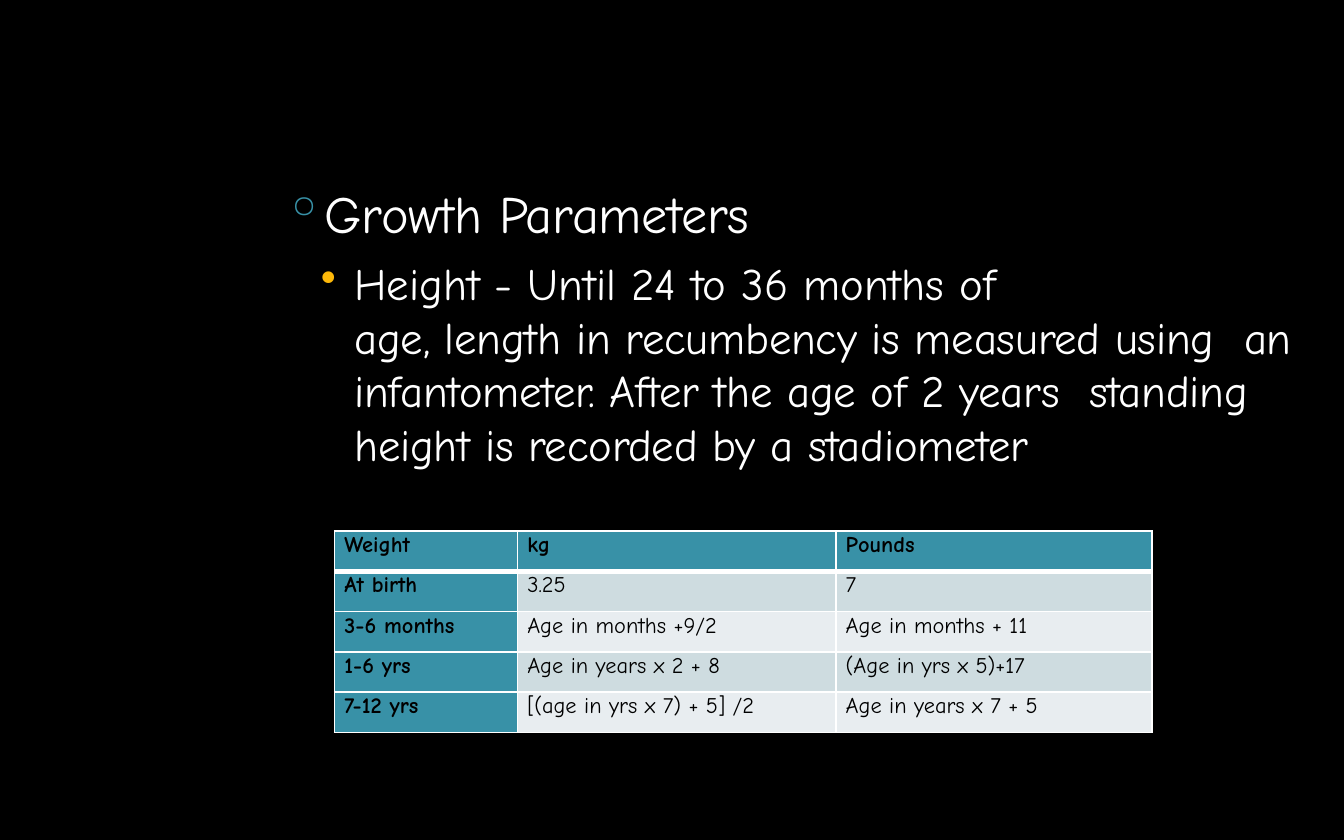
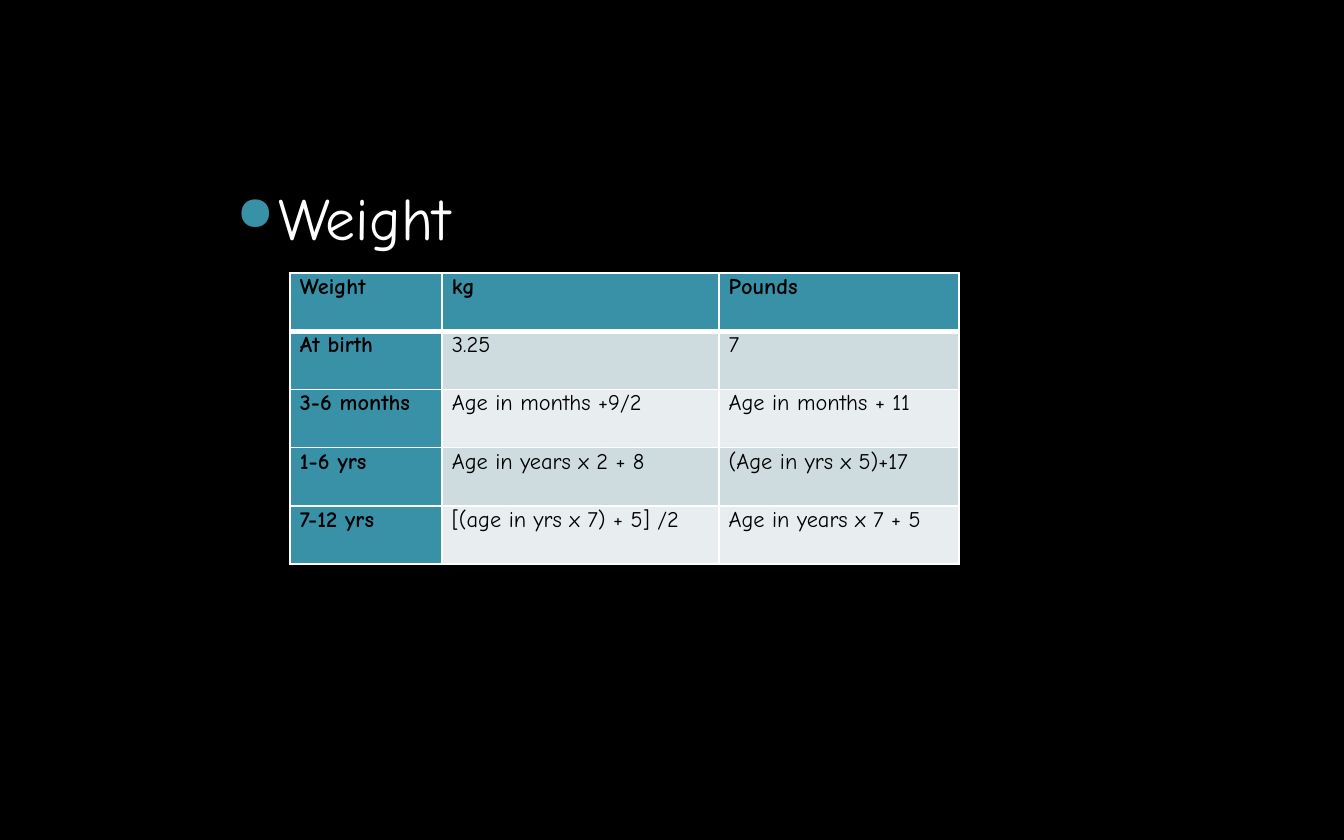
from lxml.etree import SubElement
from pptx import Presentation
from pptx.dml.color import RGBColor
from pptx.enum.text import MSO_AUTO_SIZE as AutoSize
from pptx.oxml.ns import qn
from pptx.util import Pt

# Shared look
FONT = "Comic Neue"
BLACK, WHITE = "000000", "FFFFFF"
TEAL, AMBER = "3891A7", "FDB809"
BANDS = ("CEDCE0", "E8EDF0")

WEIGHT_ROWS = (
    ("Weight", "kg", "Pounds"),
    ("At birth", "3.25", "7"),
    ("3-6 months", "Age in months +9/2", "Age in months + 11"),
    ("1-6 yrs", "Age in years x 2 + 8", "(Age in yrs x 5)+17"),
    ("7-12 yrs", "[(age in yrs x 7) + 5] /2", "Age in years x 7 + 5"),
)


def color(value):
    return RGBColor.from_string(value)


def add_page(deck):
    page = deck.slides.add_slide(deck.slide_layouts[6])
    page.background.fill.solid()
    page.background.fill.fore_color.rgb = color(BLACK)
    return page


def add_bullet(para, char, tint, percent):
    props = para._p.get_or_add_pPr()
    bullet_color = SubElement(props, qn("a:buClr"))
    SubElement(bullet_color, qn("a:srgbClr"), val=tint)
    SubElement(props, qn("a:buSzPct"), val=str(percent * 1000))
    SubElement(props, qn("a:buChar"), char=char)


def write(frame, text, *, size, tint=WHITE, bold=False, before=0, indent=0,
          hang=0, level=0, bullet=None, bullet_tint=TEAL, bullet_percent=100,
          tracking=0):
    """Fill the frame's empty first paragraph, or add another one."""
    first = frame.paragraphs[0]
    para = frame.add_paragraph() if first.runs else first
    para.level = level
    props = para._p.get_or_add_pPr()
    props.set("marL", str(Pt(indent)))
    props.set("indent", str(Pt(-hang)))
    if bullet:
        add_bullet(para, bullet, bullet_tint, bullet_percent)
    para.space_before = Pt(before)
    span = para.add_run()
    span.text = text
    span.font.name = FONT
    span.font.size = Pt(size)
    span.font.bold = bold
    span.font.color.rgb = color(tint)
    if tracking:
        span.font._element.set("spc", str(round(tracking * 100)))


def set_margins(area, top):
    area.margin_left = area.margin_right = area.margin_bottom = 0
    area.margin_top = Pt(top)


def add_text_box(page, left, top, width, height, inset):
    box = page.shapes.add_textbox(Pt(left), Pt(top), Pt(width), Pt(height))
    frame = box.text_frame
    frame.word_wrap = True
    frame.auto_size = AutoSize.SHAPE_TO_FIT_TEXT
    set_margins(frame, inset)
    return frame


def add_borders(cell, **widths):
    props = cell._tc.get_or_add_tcPr()
    for side in "LRTB":
        line = SubElement(props, qn(f"a:ln{side}"), w=str(Pt(widths.get(side, 1))))
        fill = SubElement(line, qn("a:solidFill"))
        SubElement(fill, qn("a:srgbClr"), val=WHITE)


def add_weight_table(page, left, top, columns, row_height):
    count = len(WEIGHT_ROWS)
    table = page.shapes.add_table(
        count, len(columns), Pt(left), Pt(top),
        Pt(sum(columns)), Pt(row_height * count)).table
    for column, width in zip(table.columns, columns):
        column.width = Pt(width)
    for r, texts in enumerate(WEIGHT_ROWS):
        table.rows[r].height = Pt(row_height)
        for c, text in enumerate(texts):
            cell = table.cell(r, c)
            heading = r == 0 or c == 0
            set_margins(cell, 0.8)
            # A thick rule separates the header row from the values
            add_borders(cell, T=3 if r == 1 else 1, B=3 if r == 0 else 1)
            cell.fill.solid()
            cell.fill.fore_color.rgb = color(TEAL if heading else BANDS[(r - 1) % 2])
            write(cell.text_frame, text, size=12, tint=BLACK, bold=heading, indent=5.2)


def build_height_page(deck):
    page = add_page(deck)
    frame = add_text_box(page, 151, 89.3, 545, 164, 8)
    write(frame, "Growth Parameters", size=28, indent=19.5, hang=18.7,
          bullet="◦", tracking=-0.1)
    write(frame, "Height - Until 24 to 36 months of", size=24, before=6,
          indent=38.9, hang=18, level=1, bullet="•", bullet_tint=AMBER)
    write(frame, "age, length in recumbency is measured using  an infantometer. "
          "After the age of 2 years  standing height is recorded by a stadiometer",
          size=24, indent=38.9, tracking=-0.1)
    add_weight_table(page, 179.3, 284.4, (98, 170.6, 169.2), 21.6)


def build_weight_page(deck):
    page = add_page(deck)
    add_weight_table(page, 155.5, 146.2, (81.4, 148.3, 128.7), 31.2)
    frame = add_text_box(page, 126, 95.8, 135.4, 40.3, 0.8)
    write(frame, "Weight", size=32, indent=23, hang=22.3,
          bullet="●", bullet_percent=80)


def main():
    deck = Presentation()
    deck.slide_width, deck.slide_height = Pt(720), Pt(450)
    build_height_page(deck)
    build_weight_page(deck)
    deck.save("out.pptx")


if __name__ == "__main__":
    main()
